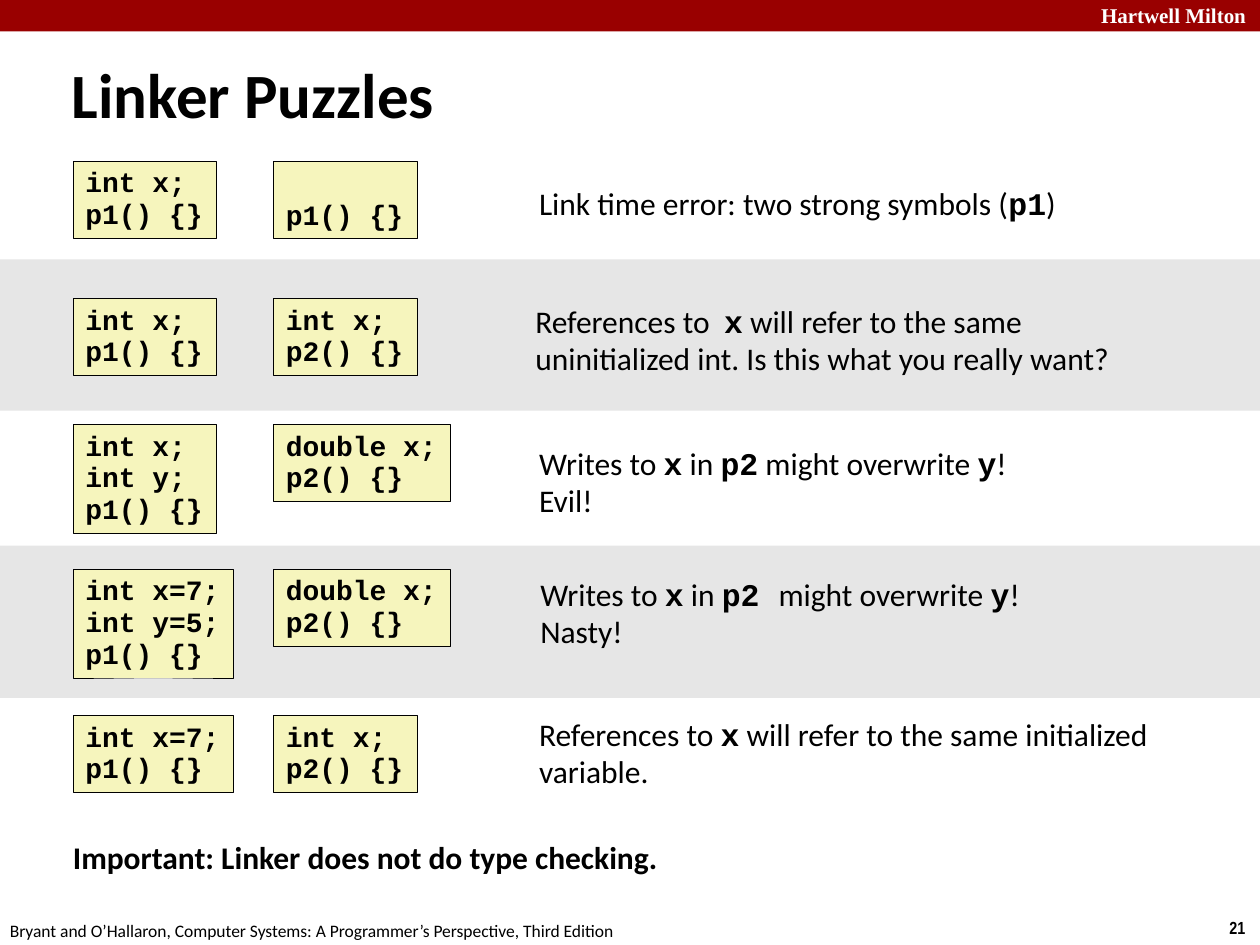
from pptx import Presentation
from pptx.dml.color import RGBColor
from pptx.enum.shapes import MSO_SHAPE as Shape
from pptx.enum.text import MSO_ANCHOR as Anchor, MSO_AUTO_SIZE as AutoSize, PP_ALIGN as Align
from pptx.util import Inches, Pt

BLACK = RGBColor(0x00, 0x00, 0x00)
WHITE = RGBColor(0xFF, 0xFF, 0xFF)
RED = RGBColor(0x99, 0x00, 0x00)
GREY = RGBColor(0xE6, 0xE6, 0xE6)
CREAM = RGBColor(0xF6, 0xF5, 0xBD)

SANS, MONO, SERIF, NARROW = "Calibri", "Courier New", "Times New Roman", "Arial Narrow"

COLUMNS, ROWS = 100, 75
CELL = Inches(10) // COLUMNS

FIRST_FILE, SECOND_FILE = 5.8, 21.7
BANDS = [(20.6, 12), (43.3, 12.1)]

# Each puzzle: top row, first file, second file, note box (left, top, width), note lines.
# Code words in a note stand between backticks.
PUZZLES = [
    (12.8, ["int x;", "p1() {}"], ["p1() {}"], (41.8, 14.3, 44.3),
     ["Link time error: two strong symbols (`p1`)"]),
    (23.7, ["int x;", "p1() {}"], ["int x;", "p2() {}"], (41.5, 23.6, 48.1),
     ["References to  `x` will refer to the same",
      "uninitialized int. Is this what you really want?"]),
    (33.7, ["int x;", "int y;", "p1() {}"], ["double x;", "p2() {}"], (41.8, 34.9, 39.5),
     ["Writes to `x` in `p2` might overwrite `y`!", "Evil!"]),
    (45.2, ["int x=7;", "int y=5;", "p1() {}"], ["double x;", "p2() {}"], (41.9, 45.3, 40.4),
     ["Writes to `x` in `p2 `might overwrite `y`!", "Nasty!"]),
    (56.8, ["int x=7;", "p1() {}"], ["int x;", "p2() {}"], (41.8, 56.4, 50.9),
     ["References to `x` will refer to the same initialized", "variable."]),
]


def place(*box):
    """Turn left, top, width and height in grid cells into slide lengths."""
    return [round(cells * CELL) for cells in box]


def add_span(para, text, font, size, color=BLACK, bold=False):
    span = para.add_run()
    span.text = text
    span.font.name = font
    span.font.size = Pt(size)
    span.font.color.rgb = color
    span.font.bold = bold


def add_rectangle(page, box, fill):
    rectangle = page.shapes.add_shape(Shape.RECTANGLE, *place(*box))
    rectangle.shadow.inherit = False
    rectangle.fill.solid()
    rectangle.fill.fore_color.rgb = fill
    rectangle.line.fill.background()
    return rectangle


def add_paragraphs(frame, lines, spacing):
    """Yield each line with a left-aligned paragraph made for it."""
    for index, line in enumerate(lines):
        para = frame.add_paragraph() if index else frame.paragraphs[0]
        para.alignment = Align.LEFT
        para.line_spacing = spacing
        yield para, line


def add_label(page, box, text, font, size, color=BLACK, bold=False, wrap=False):
    frame = page.shapes.add_textbox(*place(*box)).text_frame
    frame.word_wrap = wrap
    add_span(frame.paragraphs[0], text, font, size, color, bold)


def add_code(page, left, top, lines, min_lines=2):
    """Draw a source file in a box as wide and high as its code."""
    width = 2 + 1.34 * max(map(len, lines))
    height = 1.1 + 2.5 * max(len(lines), min_lines)
    listing = add_rectangle(page, (left, top, width, height), CREAM)
    listing.line.color.rgb = BLACK
    listing.line.width = Pt(0.25)
    frame = listing.text_frame
    frame.word_wrap = False
    frame.vertical_anchor = Anchor.BOTTOM if len(lines) < min_lines else Anchor.TOP
    for para, line in add_paragraphs(frame, lines, 0.94):
        add_span(para, line, MONO, 16, bold=True)


def add_note(page, left, top, width, lines, bold=False):
    box = left, top, width, 1 + 3 * len(lines)
    frame = page.shapes.add_textbox(*place(*box)).text_frame
    frame.word_wrap = False
    frame.auto_size = AutoSize.SHAPE_TO_FIT_TEXT
    for para, line in add_paragraphs(frame, lines, 0.98):
        for index, part in enumerate(line.split("`")):
            is_code = index % 2 == 1
            add_span(para, part, MONO if is_code else SANS, 18, bold=bold or is_code)


def add_puzzle(page, top, first, second, note, lines):
    add_code(page, FIRST_FILE, top, first)
    add_code(page, SECOND_FILE, top, second)
    add_note(page, *note, lines)


def add_title(page, box, text):
    title = page.shapes.title
    title.left, title.top, title.width, title.height = place(*box)
    frame = title.text_frame
    frame.vertical_anchor = Anchor.MIDDLE
    para = frame.paragraphs[0]
    para.alignment = Align.LEFT
    add_span(para, text, SANS, 36, bold=True)


def add_header_and_footer(page):
    add_rectangle(page, (0, 0, COLUMNS, 2.5), RED)
    add_label(page, (86.4, -0.3, 14.3, 3), "Hartwell Milton", SERIF, 12, WHITE, True, wrap=True)
    add_label(page, (96.6, 72.3, 3.4, 2.7), "21", NARROW, 10, bold=True)
    add_label(page, (-0.2, 72.5, 50.8, 2.7),
              "Bryant and O’Hallaron, Computer Systems: A Programmer’s Perspective, Third Edition",
              SANS, 10)


def main():
    deck = Presentation()
    deck.slide_width, deck.slide_height = COLUMNS * CELL, ROWS * CELL
    page = deck.slides.add_slide(deck.slide_layouts[5])
    add_header_and_footer(page)
    for top, height in BANDS:
        add_rectangle(page, (0, top, COLUMNS, height), GREY)
    add_title(page, (4.7, 3.1, 95.3, 8.6), "Linker Puzzles")
    for puzzle in PUZZLES:
        add_puzzle(page, *puzzle)
    add_note(page, 4.8, 66.2, 48.8, ["Important: Linker does not do type checking."], bold=True)
    deck.save("out.pptx")


if __name__ == "__main__":
    main()
